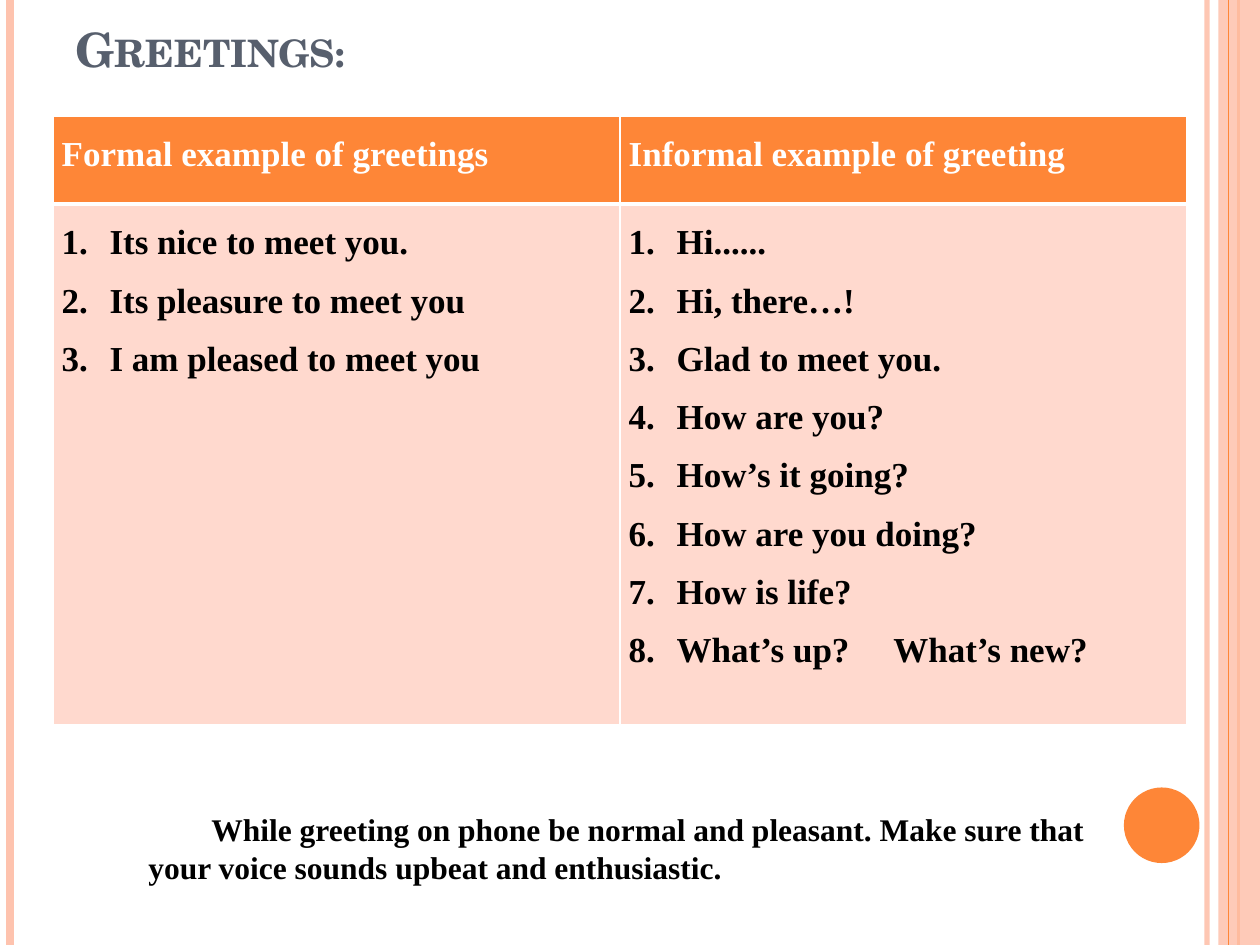
from lxml import etree
from pptx import Presentation
from pptx.dml.color import RGBColor
from pptx.enum import shapes, text
from pptx.oxml import ns
from pptx.util import Inches, Pt

ORANGE = RGBColor(0xFE, 0x86, 0x37)
PEACH = RGBColor(0xFE, 0xC3, 0xAE)
PALE = RGBColor(0xFF, 0xD9, 0xCE)
SLATE = RGBColor(0x57, 0x5F, 0x6D)
WHITE = RGBColor(0xFF, 0xFF, 0xFF)
BLACK = RGBColor(0, 0, 0)

SERIF = "Times New Roman"
HEADINGS = ["Formal example of greetings", "Informal example of greeting"]
GREETINGS = [
    ["Its nice to meet you.", "Its pleasure to meet you", "I am pleased to meet you"],
    ["Hi......", "Hi, there…!", "Glad to meet you.", "How are you?", "How’s it going?",
     "How are you doing?", "How is life?", "What’s up?\tWhat’s new?"],
]
ADVICE = ("While greeting on phone be normal and pleasant. Make sure that "
          "your voice sounds upbeat and enthusiastic.")


def add_xml(parent, tag, **attributes):
    """Append a DrawingML element and return it."""
    return etree.SubElement(parent, ns.qn(tag), {k: str(v) for k, v in attributes.items()})


def write_text(frame, lines, size=20, font=SERIF, color=BLACK, spacing=None,
               small_caps=False, numbered=False, tab=None, first_indent=None):
    """Fill a text frame with one formatted paragraph per line."""
    frame.word_wrap = True
    for index, line in enumerate(lines):
        paragraph = frame.paragraphs[0] if index == 0 else frame.add_paragraph()
        paragraph.alignment = text.PP_ALIGN.LEFT
        if spacing:
            paragraph.line_spacing = spacing
        run = paragraph.add_run()
        run.text = line
        run.font.size, run.font.name, run.font.bold = Pt(size), font, True
        run.font.color.rgb = color
        if small_caps:
            run.font._element.set("cap", "small")
        properties = paragraph._p.get_or_add_pPr()
        if first_indent:
            properties.set("indent", str(first_indent))
        if numbered:
            properties.set("marL", str(Inches(0.38)))
            properties.set("indent", str(-Inches(0.38)))
            add_xml(properties, "a:buFont", typeface="+mj-lt")
            add_xml(properties, "a:buAutoNum", type="arabicPeriod")
        if tab and "\t" in line:
            add_xml(add_xml(properties, "a:tabLst"), "a:tab", pos=tab, algn="l")


def set_opacity(element, percent):
    """Make the solid colour inside an element partly transparent."""
    color = element.find(".//" + ns.qn("a:srgbClr"))
    add_xml(color, "a:alpha", val=percent * 1000)


def add_rule(slide, x, top, height, color, width, opacity=100):
    """Draw one vertical rule."""
    rule = slide.shapes.add_connector(shapes.MSO_CONNECTOR.STRAIGHT, x, top, x, top + height)
    rule.line.color.rgb = color
    rule.line.width = Pt(width)
    if opacity < 100:
        set_opacity(rule.line._ln, opacity)
    add_xml(rule._element.spPr, "a:effectLst")


def add_block(slide, kind, left, top, width, height, color, opacity=100):
    """Draw one plain filled shape."""
    block = slide.shapes.add_shape(kind, left, top, width, height)
    block.shadow.inherit = False
    block.fill.solid()
    block.fill.fore_color.rgb = color
    block.line.fill.background()
    if opacity < 100:
        set_opacity(block._element.spPr, opacity)


def add_frame(slide, left, top, width, height):
    """Draw the edge rules, side band and disc within the slide box."""
    right = left + width
    add_rule(slide, right - Inches(0.42), top, height, PEACH, 3, 93)
    add_rule(slide, left + Inches(0.08), top, height, PEACH, 4.5)
    add_rule(slide, right - Inches(0.17), top, height, ORANGE, 1.5)
    add_block(slide, shapes.MSO_SHAPE.RECTANGLE, right - Inches(0.33), top,
              Inches(0.33), height, PEACH, 87)
    add_rule(slide, right - Inches(0.25), top, height, ORANGE, 0.75)
    add_block(slide, shapes.MSO_SHAPE.OVAL, right - Inches(1.08),
              top + height - Inches(1.25), Inches(0.6), Inches(0.6), ORANGE)


def place_title(slide, left, top, width, height):
    """Place and format the slide title."""
    title = slide.shapes.title
    title.left, title.top, title.width, title.height = left, top, width, height
    frame = title.text_frame
    frame.auto_size = text.MSO_AUTO_SIZE.NONE
    frame.vertical_anchor = text.MSO_ANCHOR.BOTTOM
    frame.margin_top, frame.margin_bottom = 0, Inches(0.47)
    write_text(frame, ["Greetings:"], size=27, font="TeX Gyre Schola", color=SLATE,
               small_caps=True)


def format_cell(cell, fill, top_border, bottom_border):
    """Set the fill, margins and white borders of a table cell."""
    cell.margin_left = cell.margin_right = Inches(0.07)
    cell.margin_top = cell.margin_bottom = 0
    properties = cell._tc.get_or_add_tcPr()
    borders = {"a:lnL": 1, "a:lnR": 1, "a:lnT": top_border, "a:lnB": bottom_border}
    for side, width in borders.items():
        line = add_xml(properties, side, w=Pt(width))
        add_xml(add_xml(line, "a:solidFill"), "a:srgbClr", val=WHITE)
    cell.fill.solid()
    cell.fill.fore_color.rgb = fill


def add_greetings_table(slide, left, top, width, height):
    """Add the table of formal and informal greetings."""
    heading_height = Inches(0.7)
    table = slide.shapes.add_table(2, len(HEADINGS), left, top, width, height).table
    table.rows[0].height = heading_height
    table.rows[1].height = height - heading_height
    for column, (heading, greetings) in enumerate(zip(HEADINGS, GREETINGS)):
        heading_cell, list_cell = table.cell(0, column), table.cell(1, column)
        format_cell(heading_cell, ORANGE, 1, 3)
        format_cell(list_cell, PALE, 3, 1)
        write_text(heading_cell.text_frame, [heading], color=WHITE, spacing=1.5)
        write_text(list_cell.text_frame, greetings, spacing=1.5, numbered=True,
                   tab=Inches(2.1))


def add_advice(slide, left, top, width, height):
    """Add the phone advice at the foot of its box."""
    frame = slide.shapes.add_textbox(left, top, width, height).text_frame
    frame.vertical_anchor = text.MSO_ANCHOR.BOTTOM
    write_text(frame, [ADVICE], size=18, first_indent=Inches(0.5))


def main():
    """Build and save the greetings slide."""
    deck = Presentation()
    deck.slide_width, deck.slide_height = Inches(10), Inches(7.5)
    slide = deck.slides.add_slide(deck.slide_layouts[5])
    add_frame(slide, 0, 0, deck.slide_width, deck.slide_height)
    place_title(slide, Inches(0.5), Inches(0.3), Inches(9), Inches(0.78))
    add_greetings_table(slide, Inches(0.42), Inches(0.92), Inches(9), Inches(4.83))
    add_advice(slide, Inches(1.08), Inches(3.13), Inches(8), Inches(3.95))
    deck.save("out.pptx")


if __name__ == "__main__":
    main()
